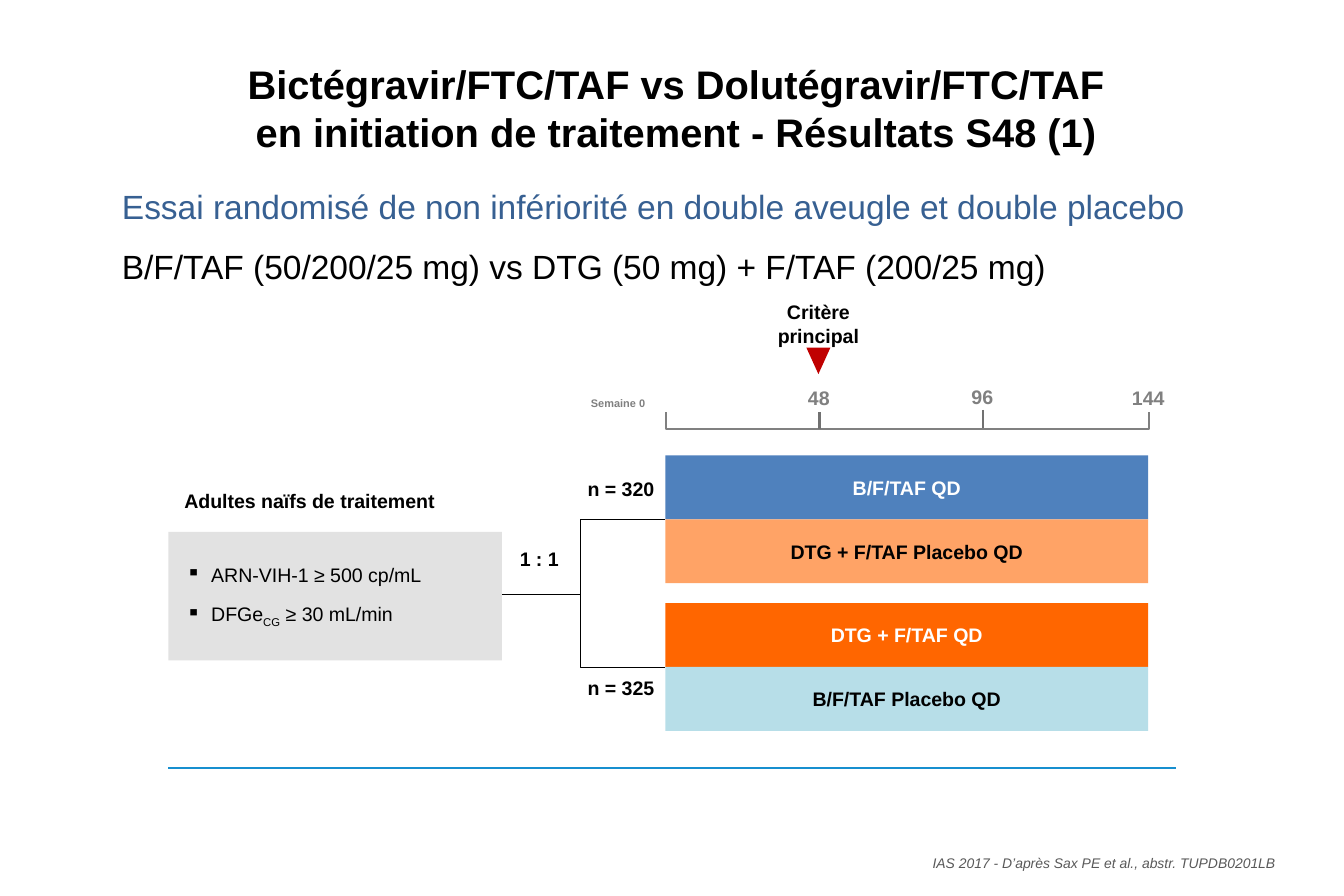
from pptx import Presentation
from pptx.util import Pt
from pptx.dml.color import RGBColor as RGB
from pptx.enum.shapes import MSO_SHAPE as SHAPE, MSO_CONNECTOR as CONN
from pptx.enum.text import PP_ALIGN as ALIGN, MSO_ANCHOR as ANCHOR
from lxml import etree

THEME = dict(
    font="Arial", title=24, body=20.2, label=11.8, week=6.6, source=8.4,
    black="000000", white="FFFFFF", blue="376092", grey="808080", tick="717171",
    note="595959", rule="178FCF", panel="E2E2E2", marker="C00000",
    bftaf="4F81BD", bftaf_placebo="B7DEE8", dtg="FF6600", dtg_placebo="FFA366",
)
NS = "http://schemas.openxmlformats.org/drawingml/2006/main"

prs = Presentation()
prs.slide_width, prs.slide_height = Pt(810), Pt(540)
s = prs.slides.add_slide(prs.slide_layouts[6])


def write(sp, text, size="label", color="black", align=ALIGN.CENTER,
          anchor=ANCHOR.MIDDLE, wrap=True, inset=(7.2, 3.6), **style):
    tf = sp.text_frame
    tf.text = text
    x, y = inset
    frame = dict(word_wrap=wrap, vertical_anchor=anchor, margin_left=Pt(x),
                 margin_right=Pt(x), margin_top=Pt(y), margin_bottom=Pt(y))
    for name, value in frame.items():
        setattr(tf, name, value)
    font = dict(name=THEME["font"], size=Pt(THEME[size]), **style)
    for p in tf.paragraphs:
        p.alignment = align
        for r in p.runs:
            r.font.color.rgb = RGB.from_string(THEME[color])
            for name, value in font.items():
                setattr(r.font, name, value)
    return tf


def draw_line(points, color, width):
    points = [(Pt(x), Pt(y)) for x, y in points]
    if len(points) == 2:
        sp = s.shapes.add_connector(CONN.STRAIGHT, *points[0], *points[1])
        etree.SubElement(sp._element.spPr, f"{{{NS}}}effectLst")
    else:
        outline = s.shapes.build_freeform(*points[0])
        outline.add_line_segments(points[1:], close=False)
        sp = outline.convert_to_shape()
        sp.fill.background()
        sp.shadow.inherit = False
    sp.line.color.rgb = RGB.from_string(THEME[color])
    sp.line.width = Pt(width)


for points, color, width in [
    ([(101.5, 463), (709, 463)], "rule", 1),
    ([(401, 402.5), (350, 402.5), (350, 313), (401, 313)], "black", 0.5),
    ([(297, 358), (350, 358)], "black", 0.5),
    ([(692.5, 248.5), (692.5, 258.5), (401.5, 258.5), (401.5, 248.5)], "grey", 1.5),
    ([(494, 248.5), (494, 258.5)], "tick", 1.5),
    ([(592.5, 247), (592.5, 258)], "tick", 1.5),
]:
    draw_line(points, color, width)

blocks = {}
for name, kind, color, box in [
    ("panel", SHAPE.RECTANGLE, "panel", (101.5, 320.5, 201, 77.5)),
    ("B/F/TAF QD", SHAPE.RECTANGLE, "bftaf", (401, 274.5, 291, 38.5)),
    ("DTG + F/TAF Placebo QD", SHAPE.RECTANGLE, "dtg_placebo", (401, 313, 291, 38.5)),
    ("DTG + F/TAF QD", SHAPE.RECTANGLE, "dtg", (401, 363.5, 291, 38.5)),
    ("B/F/TAF Placebo QD", SHAPE.RECTANGLE, "bftaf_placebo", (401, 402, 291, 38.5)),
    ("marker", SHAPE.FLOWCHART_MERGE, "marker", (486, 209.5, 14.5, 16)),
]:
    sp = s.shapes.add_shape(kind, *map(Pt, box))
    sp.shadow.inherit = False
    sp.fill.solid()
    sp.fill.fore_color.rgb = RGB.from_string(THEME[color])
    sp.line.fill.background()
    blocks[name] = sp
    if "QD" in name:
        ink = "black" if "Placebo" in name else "white"
        write(sp, name, color=ink, bold=True)

tf = write(blocks["panel"], "ARN-VIH-1 ≥ 500 cp/mL\nDFGe", align=ALIGN.LEFT)
criteria = tf.paragraphs
for text, baseline in [("CG", "-25000"), (" ≥ 30 mL/min", "0")]:
    r = criteria[1].add_run()
    r.text = text
    r._r.get_or_add_rPr().set("baseline", baseline)
    r.font.name, r.font.size = THEME["font"], Pt(THEME["label"])
    r.font.color.rgb = RGB.from_string(THEME["black"])
for p in criteria:
    p.space_after = Pt(9.1)
    pPr = p._p.get_or_add_pPr()
    pPr.set("marL", str(Pt(18.7)))
    pPr.set("indent", str(Pt(-15)))
    etree.SubElement(pPr, f"{{{NS}}}buChar", char="▪")

body = dict(size="body", align=ALIGN.LEFT, anchor=ANCHOR.TOP, inset=(0, 0))
label = dict(bold=True, wrap=False)
week = dict(color="grey", anchor=ANCHOR.BOTTOM, **label)
for text, box, fmt in [
    ("Bictégravir/FTC/TAF vs Dolutégravir/FTC/TAF\ven initiation de traitement - Résultats S48 (1)",
     (5, 25.5, 805, 79), dict(size="title", bold=True)),
    ("Essai randomisé de non infériorité en double aveugle et double placebo",
     (73.5, 112, 677.5, 30), dict(body, color="blue")),
    ("B/F/TAF (50/200/25 mg) vs DTG (50 mg) + F/TAF (200/25 mg)",
     (73.5, 148, 695.5, 30), body),
    ("IAS 2017 - D’après Sax PE et al., abstr. TUPDB0201LB", (195, 499, 574, 42),
     dict(size="source", color="note", align=ALIGN.RIGHT, inset=(0, 0), italic=True)),
    ("Critère principal", (441.5, 185.5, 103.5, 19), label),
    ("Semaine 0", (322.5, 229, 100, 21.5), dict(week, size="week")),
    ("48", (479.5, 229, 28, 21.5), week),
    ("96", (578, 228.5, 28, 21.5), week),
    ("144", (674.5, 229, 35, 21.5), week),
    ("n = 320", (346.5, 283.5, 55.5, 21.5), label),
    ("n = 325", (346.5, 403.5, 55.5, 21.5), label),
    ("1 : 1", (306, 326, 38, 21.5), label),
    ("Adultes naïfs de traitement", (104, 291, 172, 21.5), dict(label, align=ALIGN.LEFT)),
]:
    write(s.shapes.add_textbox(*map(Pt, box)), text, **fmt)

prs.save("out.pptx")
